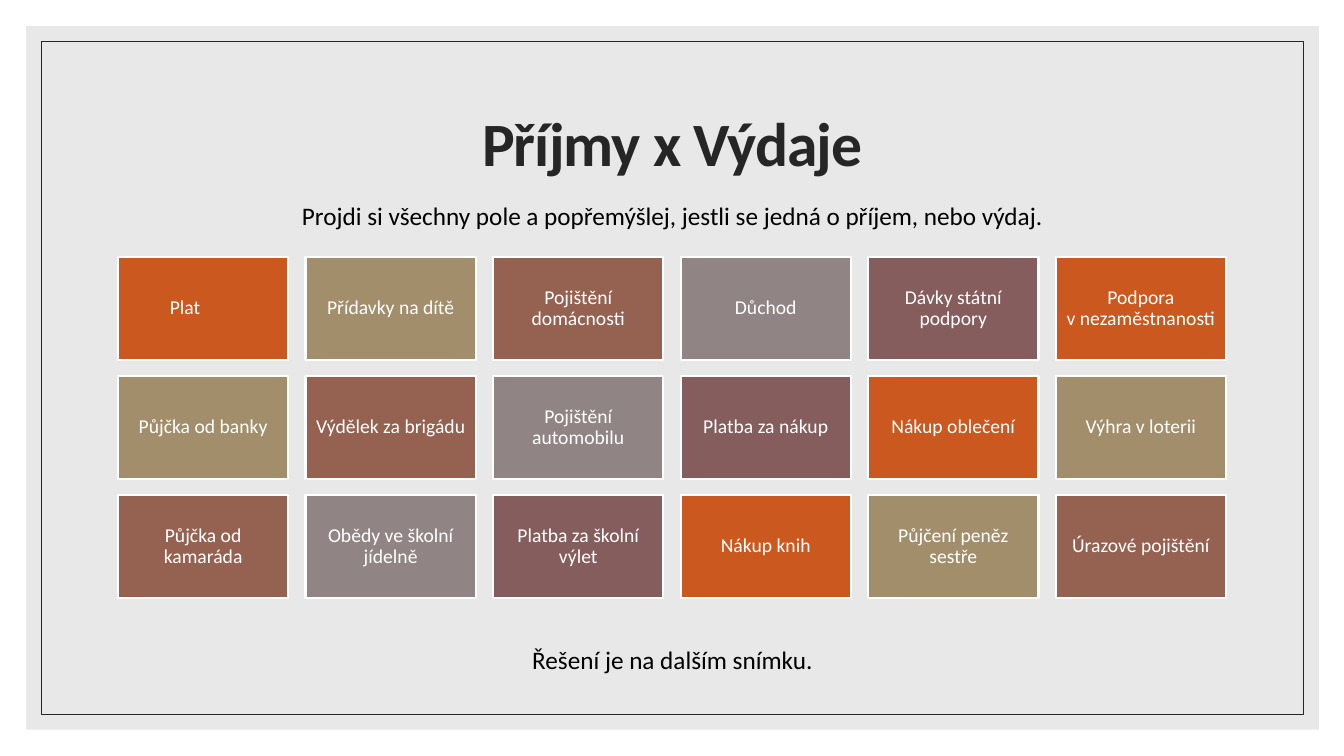
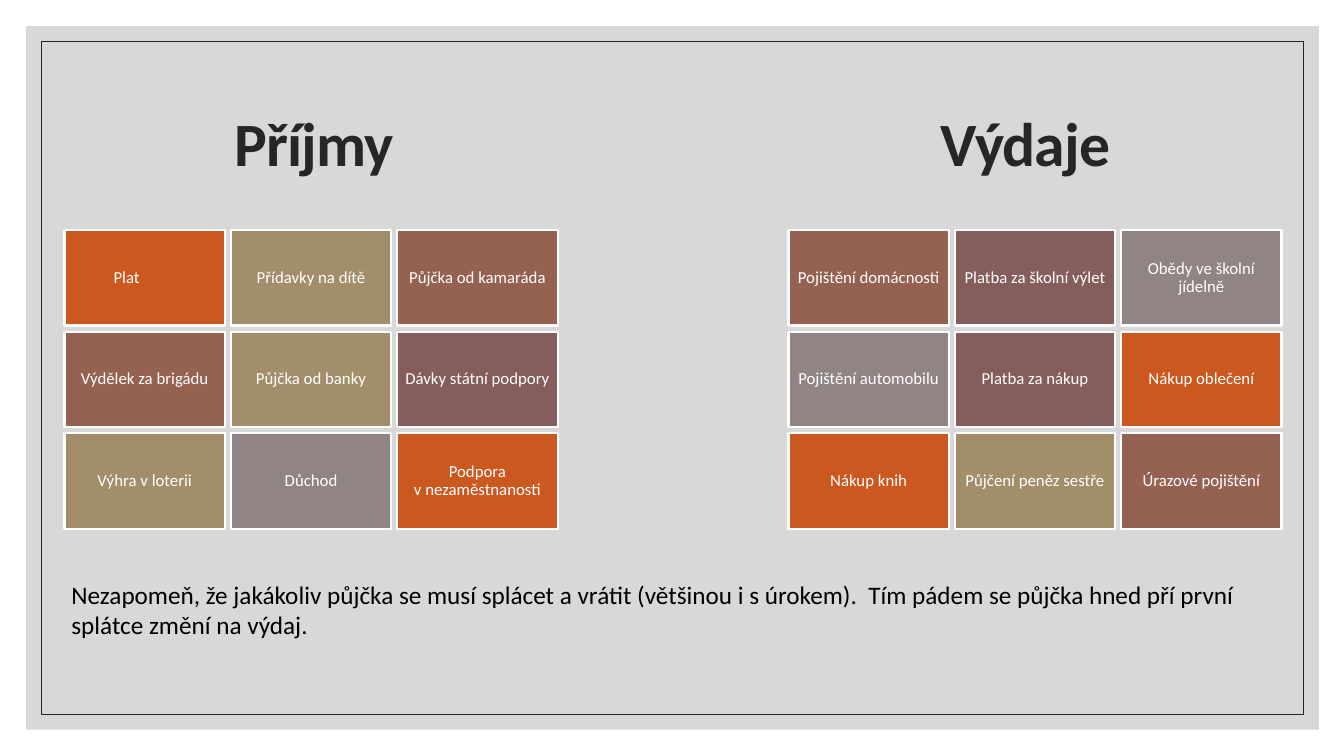
"""Build two slides that sort everyday money items into income and expenses."""
from lxml import etree
from pptx import Presentation
from pptx.dml.color import RGBColor
from pptx.enum.shapes import MSO_SHAPE
from pptx.enum.text import MSO_ANCHOR, MSO_AUTO_SIZE, PP_ALIGN
from pptx.oxml.ns import qn
from pptx.util import Inches, Pt

RECTANGLE = MSO_SHAPE.RECTANGLE
MIDDLE = MSO_ANCHOR.MIDDLE
NO_AUTOFIT = MSO_AUTO_SIZE.NONE
LEFT, CENTER = PP_ALIGN.LEFT, PP_ALIGN.CENTER

FONT = "Calibri"
WHITE = RGBColor(0xFF, 0xFF, 0xFF)
BLACK = RGBColor(0x00, 0x00, 0x00)
DARK = RGBColor(0x26, 0x26, 0x26)
LIGHT_GREY = RGBColor(0xD9, 0xD9, 0xD9)
MID_GREY = RGBColor(0xBF, 0xBF, 0xBF)
ORANGE = RGBColor(0xCB, 0x58, 0x1F)
TAN = RGBColor(0xA2, 0x8E, 0x6A)
BROWN = RGBColor(0x95, 0x62, 0x51)
GREY = RGBColor(0x91, 0x84, 0x85)
PLUM = RGBColor(0x85, 0x5D, 0x5D)
TILE_COLOURS = [ORANGE, TAN, BROWN, GREY, PLUM]

HARD_SPACE = chr(160)
UNEMPLOYMENT = f"Podpora v{HARD_SPACE}nezaměstnanosti"
ITEMS = [
    "Plat", "Přídavky na dítě", "Pojištění domácnosti",
    "Důchod", "Dávky státní podpory", UNEMPLOYMENT,
    "Půjčka od banky", "Výdělek za brigádu", "Pojištění automobilu",
    "Platba za nákup", "Nákup oblečení", "Výhra v loterii",
    "Půjčka od kamaráda", "Obědy ve školní jídelně", "Platba za školní výlet",
    "Nákup knih", "Půjčení peněz sestře", "Úrazové pojištění",
]
INCOME = [
    "Plat", "Přídavky na dítě", "Půjčka od kamaráda",
    "Výdělek za brigádu", "Půjčka od banky", "Dávky státní podpory",
    "Výhra v loterii", "Důchod", UNEMPLOYMENT,
]
EXPENSES = [
    "Pojištění domácnosti", "Platba za školní výlet", "Obědy ve školní jídelně",
    "Pojištění automobilu", "Platba za nákup", "Nákup oblečení",
    "Nákup knih", "Půjčení peněz sestře", "Úrazové pojištění",
]
ITEM_COLOURS = {
    item: TILE_COLOURS[index % len(TILE_COLOURS)] for index, item in enumerate(ITEMS)
}
OFFSET_ITEM = "Plat"
OFFSET_INSET = 0.36


def style_text(paragraph, size, colour, align, bold=False):
    """Set the font and alignment of a paragraph."""
    paragraph.alignment = align
    font = paragraph.font
    font.name, font.size, font.bold = FONT, Pt(size), bold
    font.color.rgb = colour


def add_rectangle(page, left, top, width, height):
    """Add a rectangle without a shadow."""
    box = page.shapes.add_shape(
        RECTANGLE, Inches(left), Inches(top), Inches(width), Inches(height))
    box.shadow.inherit = False
    return box


def add_frame(page, colour):
    """Put the translucent panel and its thin border behind everything."""
    panel = add_rectangle(page, 0.26, 0.26, 12.82, 6.98)
    panel.fill.solid()
    panel.fill.fore_color.rgb = colour
    panel.line.fill.background()
    colour_element = panel._element.spPr.find(".//" + qn("a:srgbClr"))
    etree.SubElement(colour_element, qn("a:alpha"), val="60000")
    border = add_rectangle(page, 0.41, 0.41, 12.52, 6.68)
    border.fill.background()
    border.line.color.rgb = DARK
    border.line.width = Pt(0.5)
    for position, box in enumerate((panel, border), start=2):
        page.shapes._spTree.insert(position, box._element)


def add_page(deck, colour):
    """Add a title-only page with the shared frame."""
    page = deck.slides.add_slide(deck.slide_layouts[5])
    add_frame(page, colour)
    return page


def set_title(page, text, left=1.17, width=11, align=CENTER, tab=None):
    """Place and format the title, with an optional tab stop in inches."""
    title = page.shapes.title
    title.left, title.top = Inches(left), Inches(0.7)
    title.width, title.height = Inches(width), Inches(1.5)
    frame = title.text_frame
    frame.text = text
    frame.auto_size = NO_AUTOFIT
    frame.vertical_anchor = MIDDLE
    paragraph = frame.paragraphs[0]
    paragraph.line_spacing = 0.9
    if tab is not None:
        stops = etree.SubElement(paragraph._p.get_or_add_pPr(), qn("a:tabLst"))
        etree.SubElement(stops, qn("a:tab"), pos=str(Inches(tab)), algn="l")
    style_text(paragraph, 44, DARK, align, bold=True)
    paragraph.runs[0]._r.get_or_add_rPr().set("spc", "-70")


def add_note(page, text, left, top, width, height, align):
    """Add a wrapped line of body text."""
    box = page.shapes.add_textbox(
        Inches(left), Inches(top), Inches(width), Inches(height))
    box.text_frame.word_wrap = True
    box.text_frame.text = text
    style_text(box.text_frame.paragraphs[0], 18, BLACK, align)


def add_tile(page, item, left, top, width, height, size, inset):
    """Add one coloured tile that names a money item."""
    tile = add_rectangle(page, left, top, width, height)
    tile.fill.solid()
    tile.fill.fore_color.rgb = ITEM_COLOURS[item]
    tile.line.color.rgb = WHITE
    tile.line.width = Pt(1.5)
    frame = tile.text_frame
    frame.text = item
    frame.word_wrap = True
    frame.vertical_anchor = MIDDLE
    frame.margin_left = frame.margin_top = frame.margin_bottom = Inches(inset)
    frame.margin_right = Inches(inset + (OFFSET_INSET if item == OFFSET_ITEM else 0))
    paragraph = frame.paragraphs[0]
    paragraph.line_spacing = 0.9
    style_text(paragraph, size, WHITE, CENTER)


def add_grid(page, items, columns, origin, pitch, tile_size, size, inset):
    """Lay tiles out row by row at an even pitch."""
    for index, item in enumerate(items):
        row, column = divmod(index, columns)
        left = origin[0] + column * pitch[0]
        top = origin[1] + row * pitch[1]
        add_tile(page, item, left, top, *tile_size, size, inset)


def build_task(deck):
    """Build the page with all items to sort."""
    page = add_page(deck, LIGHT_GREY)
    set_title(page, "Příjmy x Výdaje")
    add_note(page, "Projdi si všechny pole a popřemýšlej, jestli se jedná o příjem, nebo výdaj.",
             1.17, 1.94, 11, 0.4, CENTER)
    add_grid(page, ITEMS, 6, (1.17, 2.55), (1.86, 1.18), (1.69, 1.02), 14, 0.06)
    add_note(page, "Řešení je na dalším snímku.", 1.17, 6.34, 11, 0.4, CENTER)


def build_solution(deck):
    """Build the page with the items sorted into two groups."""
    page = add_page(deck, MID_GREY)
    set_title(page, "Příjmy\tVýdaje", left=2.23, width=9.94, align=LEFT, tab=7)
    for items, left in ((INCOME, 0.64), (EXPENSES, 7.82)):
        add_grid(page, items, 3, (left, 2.28), (1.65, 1.01), (1.59, 0.95), 12, 0.05)
    add_note(page, "Nezapomeň, že jakákoliv půjčka se musí splácet a vrátit (většinou i s úrokem).  "
             "Tím pádem se půjčka hned pří první splátce změní na výdaj.",
             0.61, 5.7, 11.87, 1.01, LEFT)


def main():
    """Build and save the deck."""
    deck = Presentation()
    deck.slide_width, deck.slide_height = Inches(13.33), Inches(7.5)
    build_task(deck)
    build_solution(deck)
    deck.save("out.pptx")


if __name__ == "__main__":
    main()
